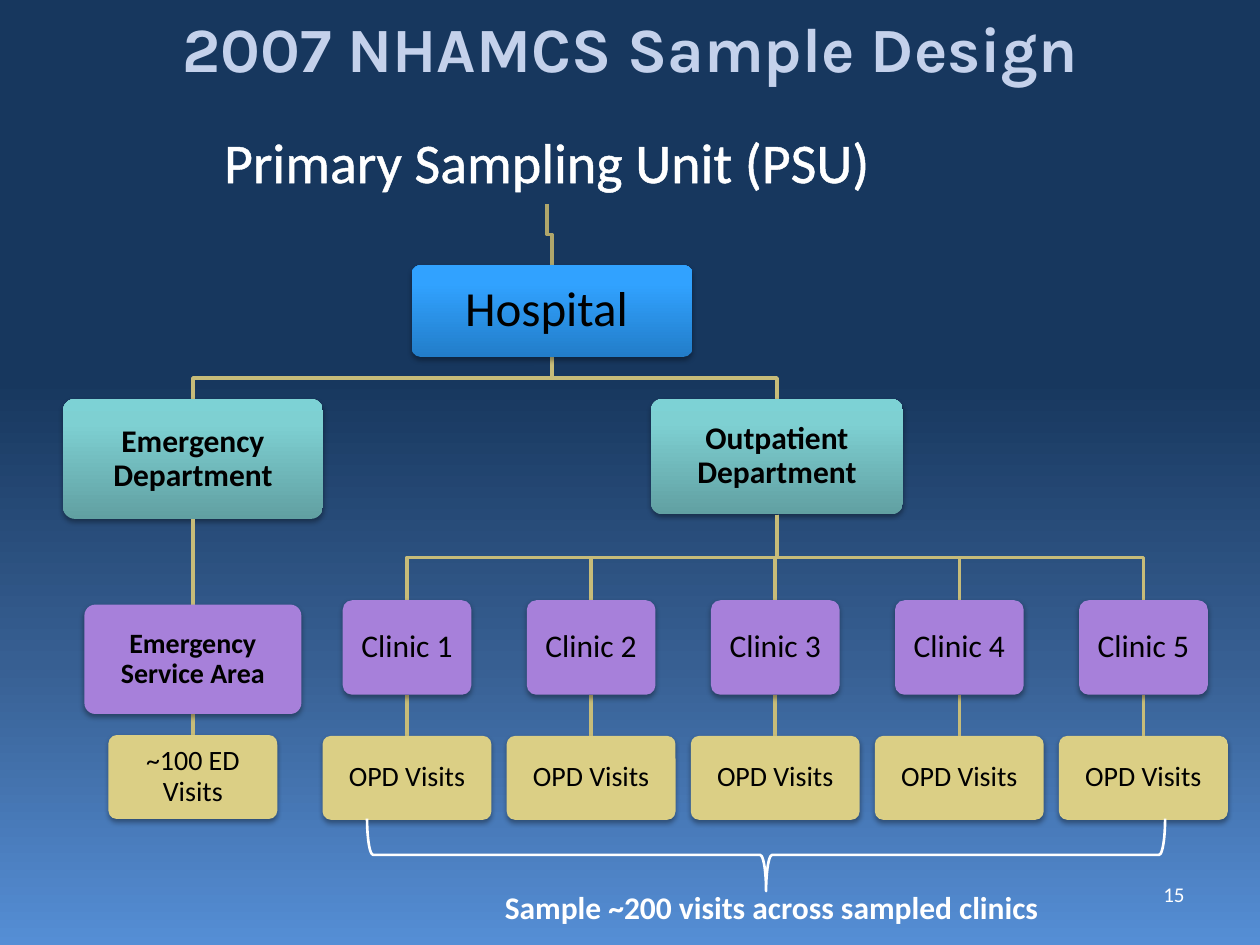
from lxml import etree
from pptx import Presentation
from pptx.dml.color import RGBColor
from pptx.enum.shapes import MSO_CONNECTOR, MSO_SHAPE
from pptx.enum.text import MSO_ANCHOR, PP_ALIGN
from pptx.oxml.ns import nsdecls, qn
from pptx.oxml import parse_xml
from pptx.util import Pt

WHITE, BLACK, GOLD = "FFFFFF", "000000", "C7BC79"
PURPLE, SAND = "A780DA", "DBCF85"
NAVY_SKY = [(0, "17375E"), (40, "17375E"), (70, "375F92"), (100, "558ED5")]
BLUE = [(0, "227DC9"), (80, "31A2FF"), (100, "33A2FF")]
TEAL = [(0, "61A0A2"), (80, "7ED0D2"), (100, "7DD2D5")]


def color(value):
    return RGBColor.from_string(value)


def set_gradient(fill, element, stops, angle):
    fill.gradient()
    fill.gradient_angle = angle
    gs_list = element.find(".//" + qn("a:gsLst"))
    for old in list(gs_list):
        gs_list.remove(old)
    for position, value in stops:
        gs = etree.SubElement(gs_list, qn("a:gs"), pos=str(position * 1000))
        etree.SubElement(gs, qn("a:srgbClr"), val=value)


def add_shadow(sp):
    sp.element.spPr.append(parse_xml(
        f'<a:effectLst {nsdecls("a")}>'
        f'<a:outerShdw blurRad="{Pt(3.1)}" dist="{Pt(1.8)}" dir="5400000" rotWithShape="0">'
        '<a:srgbClr val="000000"><a:alpha val="35000"/></a:srgbClr>'
        '</a:outerShdw></a:effectLst>'))


def write(sp, text, size, hex_color, bold=False, name="Calibri",
          align=PP_ALIGN.CENTER, anchor=MSO_ANCHOR.MIDDLE, inset=None, spacing=None):
    tf = sp.text_frame
    frame = {"word_wrap": True, "vertical_anchor": anchor}
    if inset is not None:
        for side in ("left", "top", "right", "bottom"):
            frame["margin_" + side] = Pt(inset)
    for key, value in frame.items():
        setattr(tf, key, value)
    p = tf.paragraphs[0]
    for key, value in {"alignment": align, "line_spacing": spacing}.items():
        setattr(p, key, value)
    r = p.add_run()
    r.text = text
    for key, value in {"name": name, "size": Pt(size), "bold": bold}.items():
        setattr(r.font, key, value)
    r.font.color.rgb = color(hex_color)
    return r


def add_label(s, x, y, w, h, text, size, hex_color, **fmt):
    tb = s.shapes.add_textbox(Pt(x), Pt(y), Pt(w), Pt(h))
    return write(tb, text, size, hex_color, **fmt)


def add_box(s, cx, y, w, h, fill, text, size, bold=False, inset=5):
    """Rounded box centred on cx; fill is a hex string or a list of stops."""
    sp = s.shapes.add_shape(MSO_SHAPE.ROUNDED_RECTANGLE, Pt(cx - w / 2), Pt(y), Pt(w), Pt(h))
    sp.adjustments[0] = 0.1
    sp.line.fill.background()
    if isinstance(fill, str):
        sp.fill.solid()
        sp.fill.fore_color.rgb = color(fill)
    else:
        set_gradient(sp.fill, sp.element, fill, 90)
    add_shadow(sp)
    write(sp, text, size, BLACK, bold=bold, inset=inset, spacing=0.9)


def add_link(s, x1, y1, x2, y2, hex_color=GOLD):
    """Straight connector, or an elbow that turns halfway down."""
    if x1 == x2:
        sp = s.shapes.add_connector(MSO_CONNECTOR.STRAIGHT, Pt(x1), Pt(y1), Pt(x2), Pt(y2))
        etree.SubElement(sp.element.spPr, qn("a:effectLst"))
    else:
        mid = (y1 + y2) / 2
        fb = s.shapes.build_freeform(Pt(x1), Pt(y1))
        fb.add_line_segments([(Pt(x), Pt(y)) for x, y in ((x1, mid), (x2, mid), (x2, y2))],
                             close=False)
        sp = fb.convert_to_shape()
        sp.fill.background()
        sp.shadow.inherit = False
    sp.line.color.rgb = color(hex_color)
    sp.line.width = Pt(2)


def add_brace(s, x, y, w, h):
    sp = s.shapes.add_shape(MSO_SHAPE.LEFT_BRACE, Pt(x), Pt(y), Pt(w), Pt(h))
    sp.rotation = 270
    sp.adjustments[0] = 0.083
    sp.fill.background()
    sp.line.color.rgb = color(WHITE)
    sp.line.width = Pt(1.5)
    sp.shadow.inherit = False


def add_outline(r, hex_color, width):
    r.font.element.insert(0, parse_xml(
        f'<a:ln {nsdecls("a")} w="{Pt(width)}"><a:solidFill>'
        f'<a:srgbClr val="{hex_color}"/></a:solidFill></a:ln>') ) if hasattr(
        r.font, "element") else r._r.get_or_add_rPr().insert(0, parse_xml(
            f'<a:ln {nsdecls("a")} w="{Pt(width)}"><a:solidFill>'
            f'<a:srgbClr val="{hex_color}"/></a:solidFill></a:ln>'))


def main():
    prs = Presentation()
    prs.slide_width, prs.slide_height = Pt(720), Pt(540)
    s = prs.slides.add_slide(prs.slide_layouts[6])
    set_gradient(s.background.fill, s.element, NAVY_SKY, 270)

    # Headings
    add_label(s, 36, -18, 648, 90, "2007 NHAMCS Sample Design", 36, "C4D1EB",
              bold=True, name="Karla")
    r = add_label(s, 72, 72, 481.5, 44.5, "Primary Sampling Unit (PSU)", 32, WHITE,
                  inset=9.4, spacing=0.9)
    add_outline(r, WHITE, 1.45)

    # Hospital and its two departments
    hospital, emergency, outpatient = 315.5, 110.25, 444
    add_link(s, 312.5, 116.5, hospital, 151.5, "AFA66B")
    for cx in (emergency, outpatient):
        add_link(s, hospital, 204, cx, 228)
    add_box(s, hospital, 151.5, 160.5, 52.5, BLUE, "Hospital ", 28, inset=8.6)
    add_box(s, emergency, 228, 148.5, 68.5, TEAL, "Emergency Department", 18, bold=True)
    add_box(s, outpatient, 228, 144, 66, TEAL, "Outpatient Department", 18, bold=True)

    # Emergency branch
    add_link(s, emergency, 296.5, emergency, 345.5)
    add_link(s, emergency, 408, emergency, 420)
    add_box(s, emergency, 345.5, 124, 62.5, PURPLE, "Emergency Service Area", 16, bold=True)
    add_box(s, emergency, 420, 96.5, 48, SAND, "~100 ED Visits", 16)

    # Outpatient branch: five equally spaced clinics
    for i in range(5):
        cx = 232.6 + 105.2 * i
        add_link(s, outpatient, 294, cx, 343)
        add_link(s, cx, 397, cx, 420.5)
        add_box(s, cx, 343, 73.5, 54, PURPLE, f"Clinic {i + 1}", 18)
        add_box(s, cx, 420.5, 96.5, 48, SAND, "OPD Visits", 16)

    # Brace, caption and page number
    add_label(s, 558, 492, 126, 37.5, "15", 12, WHITE, align=PP_ALIGN.RIGHT)
    add_brace(s, 417, 260.5, 41.5, 456)
    add_label(s, 252, 504, 378, 29, "Sample ~200 visits across sampled clinics", 18, WHITE,
              bold=True, anchor=MSO_ANCHOR.TOP)

    prs.save("out.pptx")


if __name__ == "__main__":
    main()
